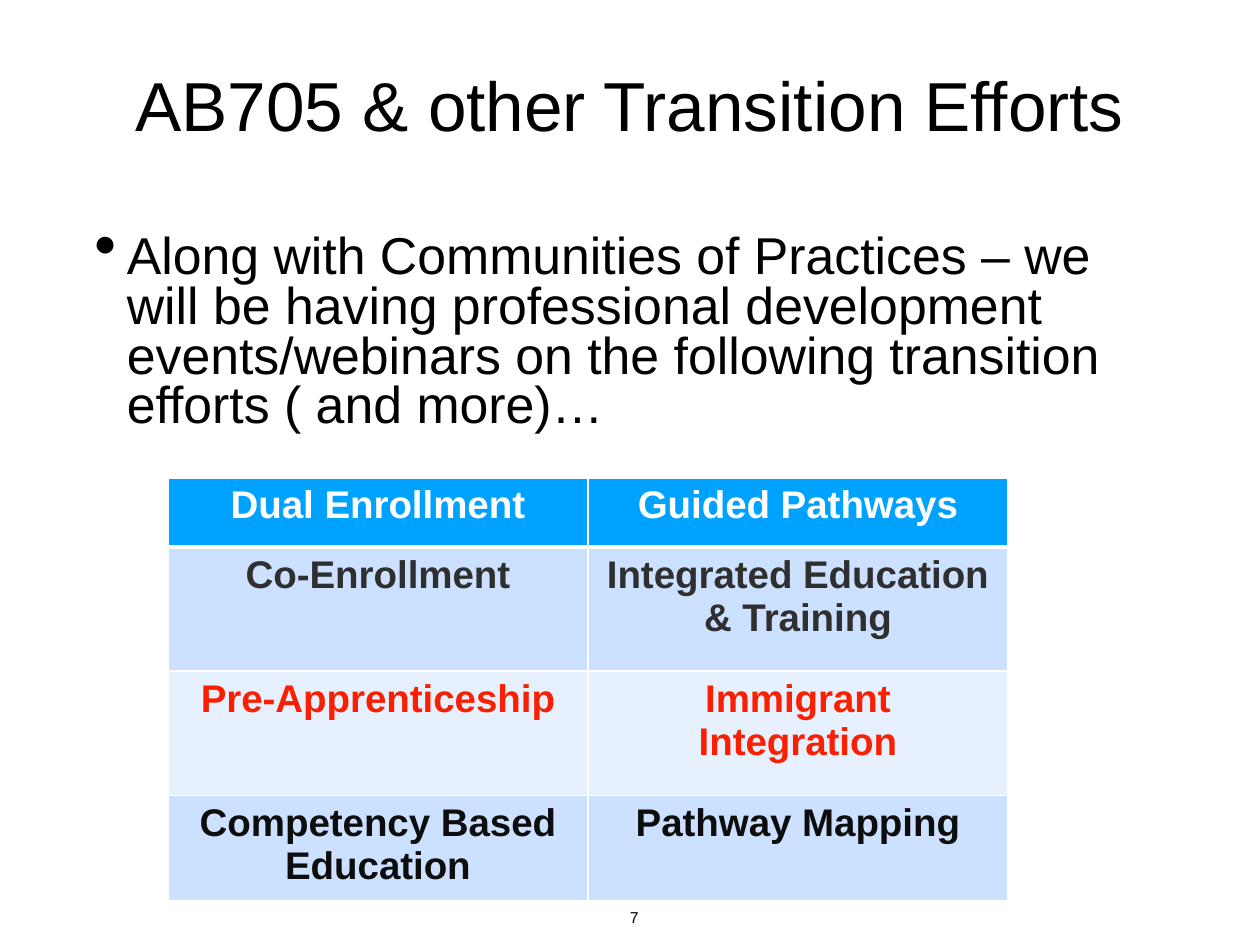
from lxml import etree
from pptx import Presentation
from pptx.dml.color import RGBColor
from pptx.enum.text import MSO_ANCHOR, PP_ALIGN
from pptx.oxml.ns import qn
from pptx.util import Pt

TOP, MID = MSO_ANCHOR.TOP, MSO_ANCHOR.MIDDLE
LEFT, CENTER = PP_ALIGN.LEFT, PP_ALIGN.CENTER
WHITE, BLACK = "FFFFFF", "000000"


def rgb(code):
    return RGBColor.from_string(code)


class Deck:
    font = "Arial"
    inset = Pt(4)

    def __init__(self, prs):
        self.slide = prs.slides.add_slide(prs.slide_layouts[6])

    def style(self, para, size, color, align, bold=False):
        para.alignment = align
        font = para.font
        font.name, font.size, font.bold = self.font, Pt(size), bold
        font.color.rgb = rgb(color)

    def text(self, words, box, size, align=CENTER, anchor=MID, wrap=True):
        frame = self.slide.shapes.add_textbox(*map(Pt, box)).text_frame
        frame.word_wrap = wrap
        frame.vertical_anchor = anchor
        frame.margin_left = frame.margin_right = self.inset
        frame.margin_top = frame.margin_bottom = self.inset
        para = frame.paragraphs[0]
        para.text = words
        self.style(para, size, BLACK, align)
        return para

    def bullet(self, words, box, size):
        para = self.text(words, box, size, LEFT)
        para.line_spacing = 0.8
        props = para._p.get_or_add_pPr()
        props.set("marL", str(Pt(18.5)))
        props.set("indent", str(-Pt(18.5)))
        # Bullet elements must come after line spacing and before the font.
        marks = (("a:buSzPct", "val", "125000"), ("a:buChar", "char", "•"))
        spot = list(props).index(props.find(qn("a:lnSpc"))) + 1
        for step, (tag, key, val) in enumerate(marks):
            mark = etree.Element(qn(tag))
            mark.set(key, val)
            props.insert(spot + step, mark)

    def edges(self, cell, top, bottom):
        """Draw white cell borders, with the given top and bottom widths."""
        props = cell._tc.get_or_add_tcPr()
        widths = {"a:lnL": 1, "a:lnR": 1, "a:lnT": top, "a:lnB": bottom}
        for spot, (tag, width) in enumerate(widths.items()):
            line = etree.Element(qn(tag), w=str(Pt(width)))
            fill = etree.SubElement(line, qn("a:solidFill"))
            etree.SubElement(fill, qn("a:srgbClr"), val=WHITE)
            props.insert(spot, line)

    def table(self, rows, box, heights, size):
        """Each row is its texts, its text colour and its fill."""
        cols = len(rows[0][0])
        grid = self.slide.shapes.add_table(len(rows), cols, *map(Pt, box)).table
        for r, (words, color, fill) in enumerate(rows):
            grid.rows[r].height = Pt(heights[r])
            for c, word in enumerate(words):
                cell = grid.cell(r, c)
                cell.text = word
                cell.fill.solid()
                cell.fill.fore_color.rgb = rgb(fill)
                self.style(cell.text_frame.paragraphs[0], size, color, CENTER, True)
                self.edges(cell, 3 if r == 1 else 1, 3 if r == 0 else 1)


def main():
    prs = Presentation()
    prs.slide_width, prs.slide_height = Pt(720), Pt(540)
    deck = Deck(prs)
    deck.text("AB705 & other Transition Efforts", (50, 14, 620, 90), 39.6)
    deck.bullet(
        "Along with Communities of Practices – we will be having professional "
        "development events/webinars on the following transition efforts "
        "( and more)…",
        (50, 124, 620, 134), 29.6)
    deck.text("7", (353, 515, 19, 19), 9, anchor=TOP, wrap=False)
    rows = [
        (("Dual Enrollment", "Guided Pathways"), WHITE, "00A2FF"),
        (("Co-Enrollment", "Integrated Education & Training"), "2F2F2F", "CCE0FF"),
        (("Pre-Apprenticeship", "Immigrant Integration"), "FA1F00", "E7F0FF"),
        (("Competency Based Education", "Pathway Mapping"), "0D0D0D", "CCE0FF"),
    ]
    deck.table(rows, (96, 273, 480, 222), (39.5, 71, 71, 39.5), 22)
    prs.save("out.pptx")


if __name__ == "__main__":
    main()
